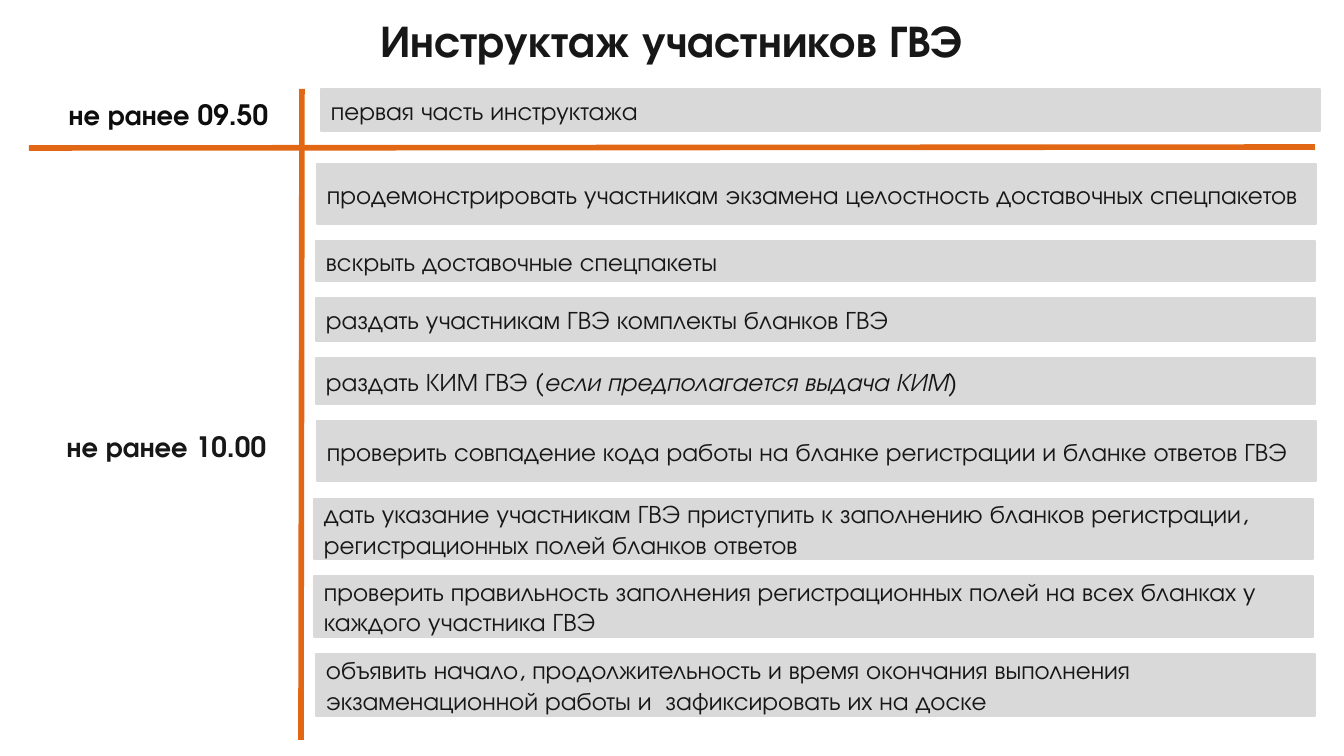
import pptx
import pptx.util
import pptx.dml.color
import pptx.enum.shapes
import pptx.enum.text
import lxml.etree

EMU_PER_PX = 914400 / 100.8
FONT = "TeX Gyre Adventor"
INK, ORANGE, GREY = "181717", "E26714", "D9D9D9"


def px(*lengths):
    return [pptx.util.Emu(round(length * EMU_PER_PX)) for length in lengths]


def color(target, value):
    target.rgb = pptx.dml.color.RGBColor.from_string(value)


deck = pptx.Presentation()
deck.slide_width, deck.slide_height = px(1344, 756)
page = deck.slides.add_slide(deck.slide_layouts[5])

title = page.shapes.title
title.left, title.top, title.width, title.height = px(337, 8, 670, 65)
title.text_frame.text = "Инструктаж участников ГВЭ"
title.text_frame.word_wrap = False
title.text_frame.auto_size = pptx.enum.text.MSO_AUTO_SIZE.NONE
title.text_frame.vertical_anchor = pptx.enum.text.MSO_ANCHOR.TOP
headings = [(title, 32, INK)]

for ends in [(302, 89, 301, 740), (29, 148, 1315, 147)]:
    divider = page.shapes.add_connector(
        pptx.enum.shapes.MSO_CONNECTOR.STRAIGHT, *px(*ends))
    color(divider.line.color, ORANGE)
    divider.line.width = pptx.util.Pt(4)
    properties = divider.element.spPr
    lxml.etree.SubElement(properties, pptx.oxml.ns.qn("a:effectLst"))

times = [
    (35, 93, "не ранее 09.50", "0D0D0D"),
    (33, 425, "не ранее 10.00", INK),
]
for left, top, text, ink in times:
    label = page.shapes.add_textbox(*px(left, top, 267, 44))
    label.text_frame.word_wrap = True
    label.text_frame.text = text
    headings.append((label, 20, ink))

for box, size, ink in headings:
    para = box.text_frame.paragraphs[0]
    para.alignment = pptx.enum.text.PP_ALIGN.CENTER
    font = para.runs[0].font
    font.name, font.size, font.bold = FONT, pptx.util.Pt(size), True
    color(font.color, ink)

steps = [
    (321, 89, 42, "первая часть инструктажа", ""),
    (317, 164, 60, "продемонстрировать участникам экзамена целостность доставочных спецпакетов", ""),
    (316, 241, 40, "вскрыть доставочные спецпакеты", ""),
    (316, 298, 43, "раздать участникам ГВЭ комплекты бланков ГВЭ", ""),
    (316, 358, 46, "раздать КИМ ГВЭ", " (если предполагается выдача КИМ)"),
    (317, 421, 60, "проверить совпадение кода работы на бланке регистрации и бланке ответов ГВЭ", ""),
    (314, 499, 60, "дать указание участникам ГВЭ приступить к заполнению бланков регистрации, регистрационных полей бланков ответов", ""),
    (314, 576, 61, "проверить правильность заполнения регистрационных полей на всех бланках у каждого участника ГВЭ", ""),
    (316, 654, 62, "объявить начало, продолжительность и время окончания выполнения экзаменационной работы и  зафиксировать их на доске", ""),
]
for left, top, height, text, remark in steps:
    box = page.shapes.add_shape(
        pptx.enum.shapes.MSO_SHAPE.RECTANGLE, *px(left, top, 999, height))
    box.shadow.inherit = False
    box.fill.solid()
    color(box.fill.fore_color, GREY)
    color(box.line.color, GREY)
    box.line.width = pptx.util.Pt(1)
    box.text_frame.word_wrap = True
    box.text_frame.vertical_anchor = pptx.enum.text.MSO_ANCHOR.MIDDLE
    box.text_frame.text = text
    para = box.text_frame.paragraphs[0]
    para.alignment = pptx.enum.text.PP_ALIGN.LEFT
    if remark:
        span = para.add_run()
        span.text = remark
        span.font.italic = True
    for span in para.runs:
        span.font.name, span.font.size = FONT, pptx.util.Pt(18)
        color(span.font.color, INK)

deck.save("out.pptx")
